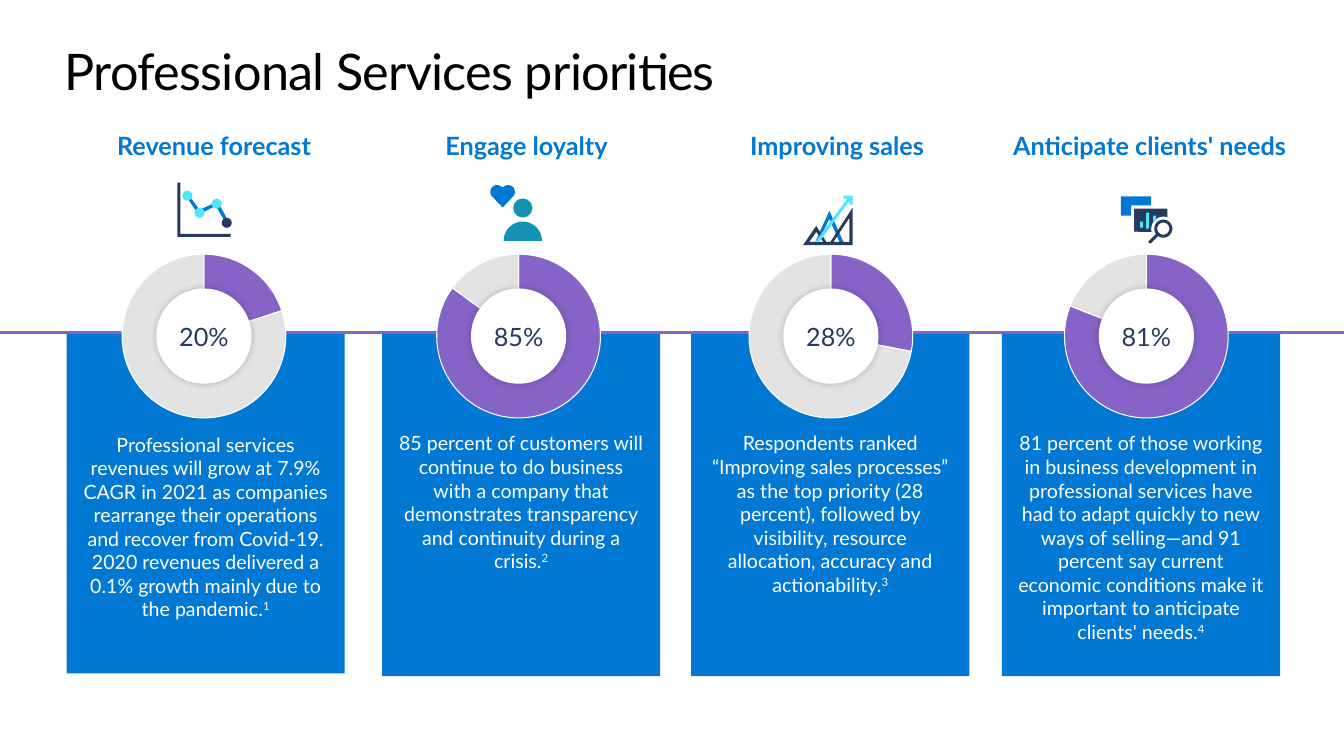
from dataclasses import dataclass
from math import cos, radians, sin

from lxml import etree
from pptx import Presentation
from pptx import util as u
from pptx.chart.data import CategoryChartData
from pptx.dml.color import RGBColor
from pptx.enum import chart as charts, shapes, text
from pptx.oxml.ns import qn
from pptx.util import Cm, Pt


@dataclass(frozen=True)
class Theme:
    font: str = "Lato"
    black: str = "000000"
    white: str = "FFFFFF"
    blue: str = "0078D4"
    purple: str = "8663C6"
    grey: str = "E3E3E3"
    navy: str = "243A5E"
    cyan: str = "50E6FF"
    teal: str = "1392B4"
    title: u.Length = Pt(36)
    heading: u.Length = Pt(18)
    body: u.Length = Pt(14)
    chart: u.Length = Pt(10)


THEME = Theme()
COLUMN_WIDTH = Cm(7.01)
ICON_UNIT = Cm(0.0254)
FINENESS = 100


def style_font(font, size, color, bold=False):
    font.name, font.size, font.bold = THEME.font, size, bold
    font.color.rgb = RGBColor.from_string(color)


def paint(shape, color):
    shape.shadow.inherit = False
    shape.fill.solid()
    shape.fill.fore_color.rgb = RGBColor.from_string(color)
    shape.line.fill.background()


def set_insets(frame, left, top, right, bottom):
    frame.margin_left, frame.margin_top = left, top
    frame.margin_right, frame.margin_bottom = right, bottom


def add_label(page, box, words, color, bold=False):
    frame = page.shapes.add_textbox(*box).text_frame
    frame.word_wrap = True
    frame.vertical_anchor = text.MSO_ANCHOR.MIDDLE
    para = frame.paragraphs[0]
    para.text = words
    para.alignment = text.PP_ALIGN.CENTER
    style_font(para.font, THEME.heading, color, bold)
    return frame


def fill_title(page, words):
    title = page.shapes.title
    title.left, title.top, title.width, title.height = Cm(1.63), Cm(1.02), Cm(30.6), Cm(1.55)
    frame = title.text_frame
    set_insets(frame, 0, 0, 0, 0)
    frame.vertical_anchor = text.MSO_ANCHOR.TOP
    frame.auto_size = text.MSO_AUTO_SIZE.NONE
    para = frame.paragraphs[0]
    para.alignment = text.PP_ALIGN.LEFT
    para.add_run().text = words
    para.runs[0]._r.get_or_add_rPr().set("spc", "-50")
    style_font(para.font, THEME.title, THEME.black)


def add_card(page, left, top, height, words, note):
    card = page.shapes.add_shape(shapes.MSO_SHAPE.RECTANGLE, left, top, COLUMN_WIDTH, height)
    paint(card, THEME.blue)
    frame = card.text_frame
    frame.word_wrap = True
    frame.vertical_anchor = text.MSO_ANCHOR.TOP
    set_insets(frame, Cm(0.41), Cm(2.49), Cm(0.41), Cm(0.41))
    para = frame.paragraphs[0]
    para.alignment = text.PP_ALIGN.CENTER
    para.add_run().text = words
    footnote = para.add_run()
    footnote.text = note
    footnote._r.get_or_add_rPr().set("baseline", "30000")
    style_font(para.font, THEME.body, THEME.white)


def add_divider(page, width, top):
    line = page.shapes.add_connector(shapes.MSO_CONNECTOR.STRAIGHT, 0, top, width, top)
    line.line.color.rgb = RGBColor.from_string(THEME.purple)
    line.line.width = Pt(2.75)
    etree.SubElement(line._element.spPr, qn("a:effectLst"))


def add_soft_shadow(shape):
    effects = shape._element.spPr.find(qn("a:effectLst"))
    shadow = etree.SubElement(effects, qn("a:outerShdw"), blurRad=str(Pt(5)), algn="ctr", rotWithShape="0")
    color = etree.SubElement(shadow, qn("a:srgbClr"), val=THEME.black)
    etree.SubElement(color, qn("a:alpha"), val="20000")


def add_dial(page, left, top, size, percent):
    """Pie with a white hub that carries the percentage."""
    data = CategoryChartData()
    data.categories = ["1", "2"]
    data.add_series("Series 1", (percent, 100 - percent))
    pie = page.shapes.add_chart(charts.XL_CHART_TYPE.PIE, left, top, size, size, data).chart
    pie.has_legend = pie.has_title = False
    style_font(pie.font, THEME.chart, THEME.black)
    plot = pie.plots[0]
    plot.vary_by_categories = True
    for index, color in enumerate((THEME.purple, THEME.grey)):
        look = plot.series[0].points[index].format
        look.fill.solid()
        look.fill.fore_color.rgb = RGBColor.from_string(color)
        look.line.color.rgb = RGBColor.from_string(THEME.white)
        look.line.width = Pt(0.75)

    area = pie._chartSpace.chart.plotArea
    for old in area.findall(qn("c:layout")):
        area.remove(old)
    layout = etree.Element(qn("c:layout"))
    area.insert(0, layout)
    manual = etree.SubElement(layout, qn("c:manualLayout"))
    for tag, value in (("layoutTarget", "inner"), ("xMode", "edge"), ("yMode", "edge"),
                       ("x", "0.07"), ("y", "0.07"), ("w", "0.86"), ("h", "0.86")):
        etree.SubElement(manual, qn("c:" + tag), val=value)

    hub_size = size // 2
    inset = (size - hub_size) // 2
    hub = page.shapes.add_shape(shapes.MSO_SHAPE.OVAL, left + inset, top + inset, hub_size, hub_size)
    paint(hub, THEME.white)
    add_soft_shadow(hub)
    label_height = Cm(0.76)
    box = (left + inset, top + (size - label_height) // 2, hub_size, label_height)
    set_insets(add_label(page, box, f"{percent}%", THEME.navy), 0, 0, 0, 0)


def arc(center, radius, start, end, steps=24):
    angles = [radians(start + (end - start) * step / steps) for step in range(steps + 1)]
    return [(center[0] + radius * cos(angle), center[1] + radius * sin(angle)) for angle in angles]


class Icon:
    """Group of flat pieces, measured in icon units from its top left corner."""

    def __init__(self, page, left, top):
        self.pieces = page.shapes.add_group_shape().shapes
        self.left, self.top = left, top

    def outline(self, color, *contours):
        contours = [[(x * FINENESS, y * FINENESS) for x, y in contour] for contour in contours]
        builder = self.pieces.build_freeform(*contours[0][0], scale=ICON_UNIT / FINENESS)
        for index, contour in enumerate(contours):
            if index:
                builder.move_to(*contour[0])
            builder.add_line_segments(contour[1:], close=True)
        paint(builder.convert_to_shape(self.left, self.top), color)

    def preset(self, kind, color, x, y, width, height):
        shape = self.pieces.add_shape(kind, self.left + x * ICON_UNIT, self.top + y * ICON_UNIT,
                                      width * ICON_UNIT, height * ICON_UNIT)
        paint(shape, color)

    def dot(self, color, x, y, size):
        self.preset(shapes.MSO_SHAPE.OVAL, color, x, y, size, size)


def draw_forecast(icon):
    icon.outline(THEME.navy, [(3, 51), (3, 0), (0, 0), (0, 54), (53, 54), (53, 51)])
    icon.outline(THEME.blue, [(11, 12), (9, 14), (21, 32), (38, 23), (48, 40), (51, 39), (40, 19), (22, 27)])
    icon.dot(THEME.navy, 44, 35, 10)
    for x, y in ((5, 8), (17, 25), (34, 16)):
        icon.dot(THEME.cyan, x, y, 10)


def draw_loyalty(icon):
    icon.outline(THEME.teal, arc((32.5, 55), 19, 180, 360))
    icon.dot(THEME.teal, 23, 13, 19)
    lobes = arc((7, 6.5), 6.7, 137, 317) + arc((18, 6.5), 6.7, 223, 403)
    icon.outline(THEME.blue, lobes + [(12.5, 22)])


def draw_sales(icon):
    icon.outline(THEME.blue, [(15, 46), (12, 46), (26, 15), (40, 46), (36, 46), (26, 23)])
    icon.outline(THEME.navy, [(49, 49), (0, 49), (13, 30), (23, 46), (27, 46), (49, 12)],
                 [(30, 46), (46, 46), (46, 22)], [(6, 46), (20, 46), (13, 36)])
    icon.outline(THEME.cyan, [(40, 0), (40, 3), (44, 3), (12, 46), (16, 46), (46, 5), (46, 9), (49, 9), (49, 0)])


def draw_needs(icon):
    lens = (42, 32)
    icon.outline(THEME.navy, [(13, 35), (13, 12), (46, 12)] + arc(lens, 12, 290, 165))
    icon.outline(THEME.blue, [(10, 9), (30, 9), (30, 0), (0, 0), (0, 19), (10, 19)])
    for x, y, height in ((19, 25, 6), (25, 16, 16)):
        icon.preset(shapes.MSO_SHAPE.RECTANGLE, THEME.cyan, x, y, 3, height)
    icon.outline(THEME.navy, arc(lens, 9, 144, 485) + [(29, 47), (27, 45)], arc(lens, 6, 0, 360))
    icon.outline(THEME.cyan, [(32, 19), (32, 26), (35, 23), (35, 19)])


@dataclass(frozen=True)
class Priority:
    """One column; heading, dial and icon are placed from its left edge."""
    left: float
    card: tuple
    heading_box: tuple
    dial_left: float
    icon_at: tuple
    draw_icon: object
    heading: str
    percent: int
    words: str


PRIORITIES = (
    Priority(1.68, (8.41, 8.56), (-0.03, 7.49), 1.06, (2.79, 4.6), draw_forecast, "Revenue forecast", 20,
             "Professional services revenues will grow at 7.9% CAGR in 2021 as companies rearrange their operations "
             "and recover from Covid-19. 2020 revenues delivered a 0.1% growth mainly due to the pandemic."),
    Priority(9.63, (8.38, 8.66), (-0.13, 7.54), 1.04, (2.72, 4.67), draw_loyalty, "Engage loyalty", 85,
             "85 percent of customers will continue to do business with a company that demonstrates transparency "
             "and continuity during a crisis."),
    Priority(17.42, (8.38, 8.66), (-0.07, 7.49), 1.12, (2.82, 4.93), draw_sales, "Improving sales", 28,
             "Respondents ranked “Improving sales processes” as the top priority (28 percent), followed by "
             "visibility, resource allocation, accuracy and actionability."),
    Priority(25.25, (8.38, 8.66), (-0.23, 7.9), 1.24, (3, 4.95), draw_needs, "Anticipate clients' needs", 81,
             "81 percent of those working in business development in professional services have had to adapt "
             "quickly to new ways of selling—and 91 percent say current economic conditions make it important to "
             "anticipate clients' needs."),
)


def build_priorities(deck):
    page = deck.slides.add_slide(deck.slide_layouts[5])
    fill_title(page, "Professional Services priorities")
    for number, item in enumerate(PRIORITIES, 1):
        shift, width = item.heading_box
        add_label(page, (Cm(item.left + shift), Cm(3.15), Cm(width), Cm(1.02)), item.heading, THEME.blue, True)
        add_card(page, Cm(item.left), *map(Cm, item.card), item.words, str(number))
    add_divider(page, deck.slide_width, Cm(8.38))
    for item in PRIORITIES:
        add_dial(page, Cm(item.left + item.dial_left), Cm(6.07), Cm(4.8), item.percent)
        x, y = item.icon_at
        item.draw_icon(Icon(page, Cm(item.left + x), Cm(y)))


def main():
    deck = Presentation()
    deck.slide_width, deck.slide_height = Cm(33.87), Cm(19.05)
    build_priorities(deck)
    deck.save("out.pptx")


if __name__ == "__main__":
    main()
